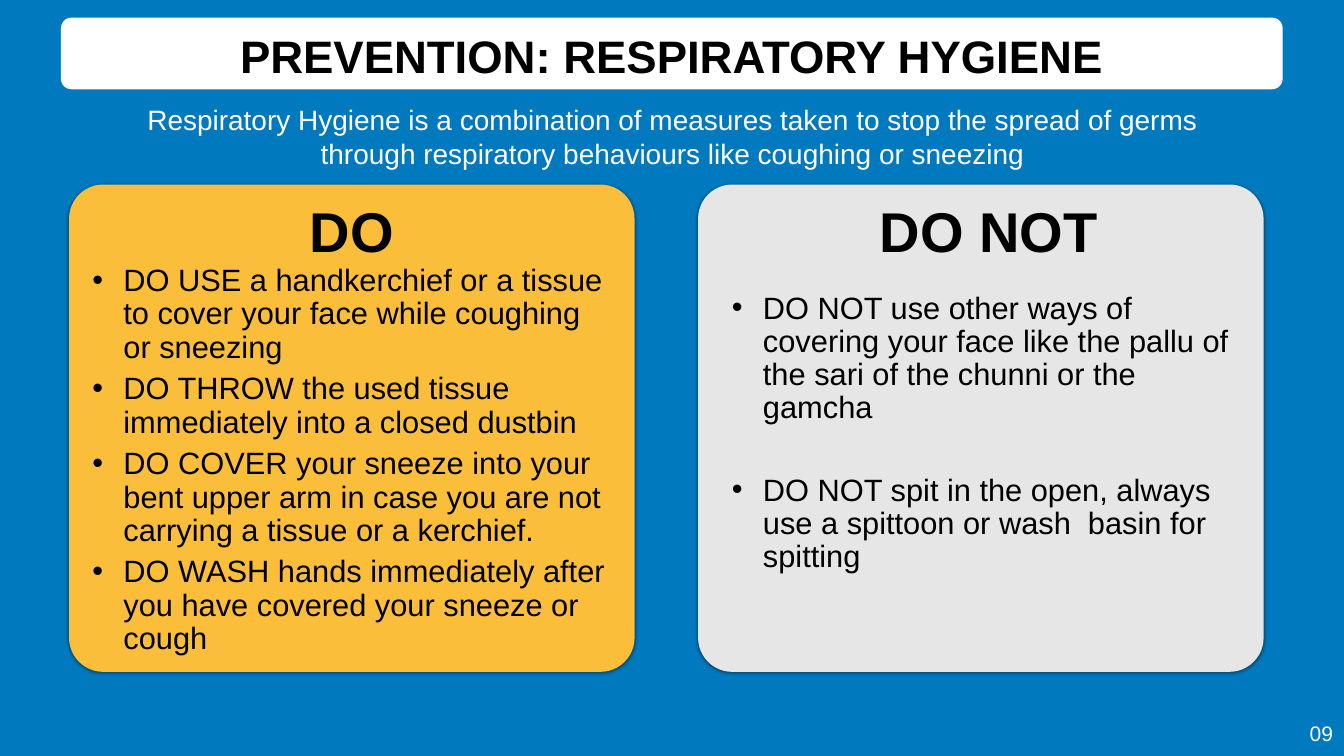
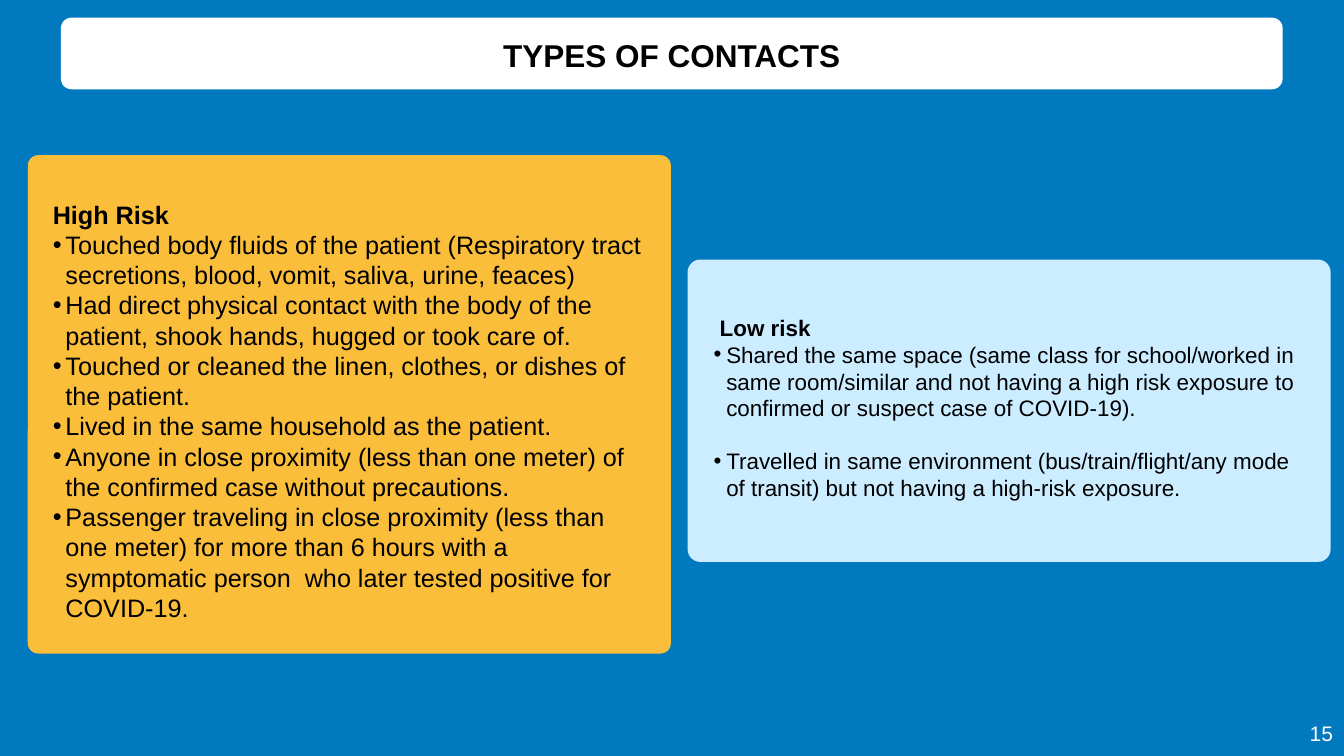
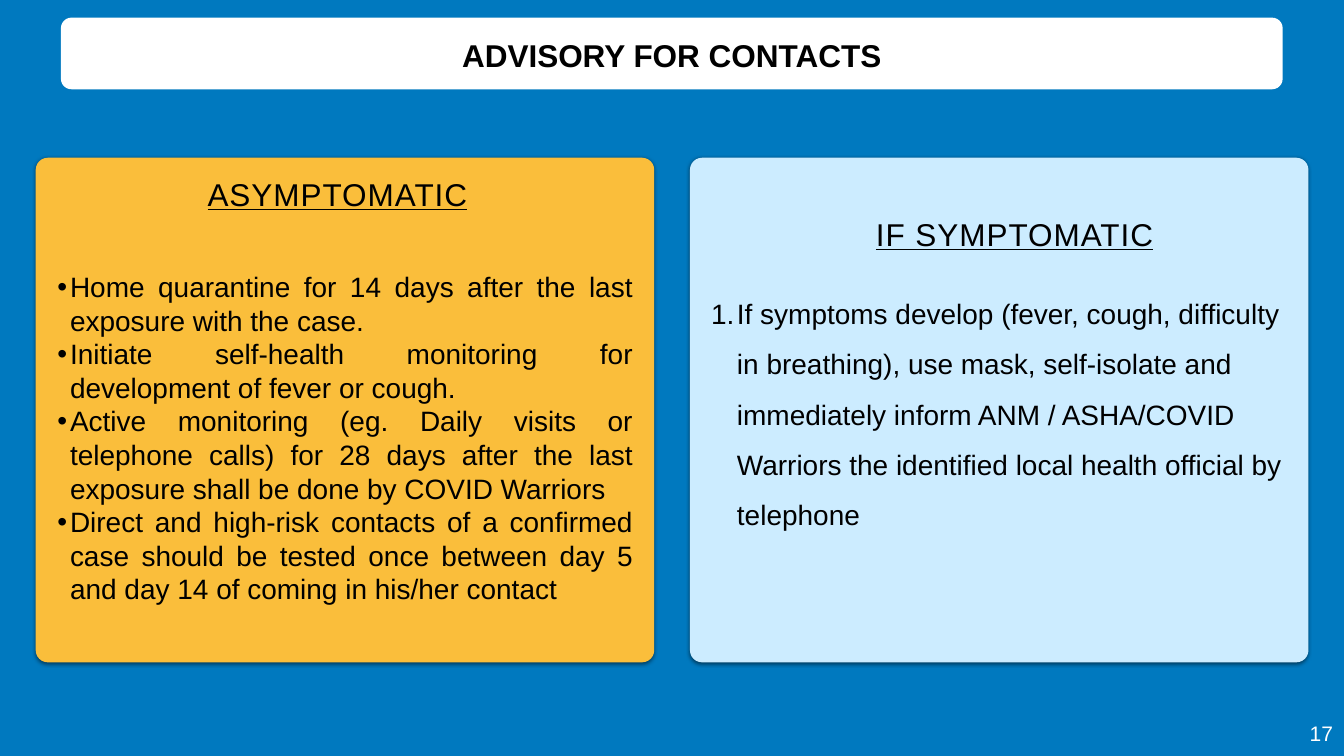
from lxml import etree
from pptx import Presentation
from pptx.dml.color import RGBColor
from pptx.enum.shapes import MSO_SHAPE
from pptx.enum.text import MSO_ANCHOR, MSO_AUTO_SIZE, PP_ALIGN
from pptx.oxml.ns import qn
from pptx.util import Cm, Pt

ROUNDED = MSO_SHAPE.ROUNDED_RECTANGLE
TOP, MIDDLE = MSO_ANCHOR.TOP, MSO_ANCHOR.MIDDLE
LEFT, CENTER, JUSTIFY = PP_ALIGN.LEFT, PP_ALIGN.CENTER, PP_ALIGN.JUSTIFY
FIT_SHAPE = MSO_AUTO_SIZE.SHAPE_TO_FIT_TEXT

FONT = "Arial"
COLORS = {
    "background": "0079BF",
    "band": "FFFFFF",
    "amber": "FABE3B",
    "grey": "E5E6E5",
    "pale_blue": "CCECFF",
    "text": "000000",
    "light_text": "FFFFFF",
}
BAND = (3.07, 0.89, 61.57, 3.61)
BAND_TEXT_WIDTH = 47

DO_ITEMS = [
    "DO USE a handkerchief or a tissue to cover your face while coughing or sneezing",
    "DO THROW the used tissue immediately into a closed dustbin",
    "DO COVER your sneeze into your bent upper arm in case you are not carrying a "
    "tissue or a kerchief.",
    "DO WASH hands immediately after you have covered your sneeze or cough",
]
DO_NOT_ITEMS = [
    "DO NOT use other ways of covering your face like the pallu of the sari of the "
    "chunni or the gamcha",
    "DO NOT spit in the open, always use a spittoon or wash  basin for spitting",
]
HIGH_RISK_ITEMS = [
    "Touched body fluids of the patient (Respiratory tract secretions, blood, vomit, "
    "saliva, urine, feaces)",
    "Had direct physical contact with the body of the patient, shook hands, hugged or "
    "took care of.",
    "Touched or cleaned the linen, clothes, or dishes of the patient.",
    "Lived in the same household as the patient.",
    "Anyone in close proximity (less than one meter) of the confirmed case without "
    "precautions.",
    "Passenger traveling in close proximity (less than one meter) for more than 6 hours "
    "with a symptomatic person  who later tested positive for COVID-19.",
]
LOW_RISK_ITEMS = [
    "Shared the same space (same class for school/worked in same room/similar and not "
    "having a high risk exposure to confirmed or suspect case of COVID-19).",
    "Travelled in same environment (bus/train/flight/any mode of transit) but not "
    "having a high-risk exposure.",
]
ASYMPTOMATIC_ITEMS = [
    "Home quarantine for 14 days after the last exposure with the case.",
    "Initiate self-health monitoring for development of fever or cough.",
    "Active monitoring (eg. Daily visits or telephone calls) for 28 days after the last "
    "exposure shall be done by COVID Warriors",
    "Direct and high-risk contacts of a confirmed case should be tested once between "
    "day 5 and day 14 of coming in his/her contact",
]
SYMPTOMATIC_ITEMS = [
    "If symptoms develop (fever, cough, difficulty in breathing), use mask, self-isolate "
    "and immediately inform ANM / ASHA/COVID Warriors the identified local health "
    "official by telephone",
]


def add_shadow(sp):
    effects = sp._element.spPr.find(qn("a:effectLst"))
    shadow = etree.SubElement(effects, qn("a:outerShdw"), blurRad=str(Pt(5)),
                              dist=str(Pt(2)), dir="5400000", rotWithShape="0")
    color = etree.SubElement(shadow, qn("a:srgbClr"), val="000000")
    etree.SubElement(color, qn("a:alpha"), val="50000")


def add_card(shapes, box, fill, corner, shadow=False):
    sp = shapes.add_shape(ROUNDED, *map(Cm, box))
    sp.adjustments[0] = corner
    sp.fill.solid()
    sp.fill.fore_color.rgb = RGBColor.from_string(COLORS[fill])
    sp.line.fill.background()
    sp.shadow.inherit = False
    if shadow:
        add_shadow(sp)


def add_frame(shapes, box, anchor=TOP, wrap=True, inset=0.15):
    """Add an empty text box and return its text frame."""
    tf = shapes.add_textbox(*map(Cm, box)).text_frame
    tf.word_wrap = wrap
    tf.auto_size = FIT_SHAPE
    tf.vertical_anchor = anchor
    tf.margin_left = tf.margin_right = tf.margin_top = tf.margin_bottom = Cm(inset)
    return tf


def add_paragraph(tf, text, size, align=LEFT, bold=False, color="text"):
    p = tf.paragraphs[0] if not tf.text else tf.add_paragraph()
    p.text = text
    p.alignment = align
    p.font.name = FONT
    p.font.size = Pt(size)
    p.font.bold = bold
    p.font.color.rgb = RGBColor.from_string(COLORS[color])
    return p


def set_indent(p, left, first=0):
    pPr = p._p.get_or_add_pPr()
    pPr.set("marL", str(Cm(left)))
    pPr.set("indent", str(Cm(first)))
    return pPr


def add_list(tf, items, size, indent, align=LEFT, before=0, gap=None, spacing=1.0,
             numbered=False):
    """Add hanging items; gap replaces the space before every item but the first."""
    for i, item in enumerate(items):
        p = add_paragraph(tf, item, size, align)
        p.line_spacing = spacing
        p.space_before = Pt(gap if i and gap else before)
        pPr = set_indent(p, indent, -indent)
        defaults = pPr.find(qn("a:defRPr"))
        if numbered:
            marks = [("a:buFont", {"typeface": FONT}),
                     ("a:buAutoNum", {"type": "arabicPeriod"})]
        else:
            marks = [("a:buFont", {"typeface": FONT}), ("a:buChar", {"char": "•"})]
        for tag, attributes in marks:
            defaults.addprevious(pPr.makeelement(qn(tag), attributes))


def inside(box, dx, dy, width, height):
    return box[0] + dx, box[1] + dy, width, height


def add_title_band(slide, title, size):
    shapes = slide.shapes.add_group_shape().shapes
    add_card(shapes, BAND, "band", 0.147)
    height = 0.04 * size + 0.23
    box = inside(BAND, (BAND[2] - BAND_TEXT_WIDTH) / 2, (BAND[3] - height) / 2,
                 BAND_TEXT_WIDTH, height)
    add_paragraph(add_frame(shapes, box, inset=0.13), title, size, CENTER, bold=True)


def add_page_number(slide, number):
    tf = add_frame(slide.shapes, (65.84, 36.2, 1.5, 1.47), MIDDLE, wrap=False)
    add_paragraph(tf, number, 30, CENTER, color="light_text")


def add_base_slide(prs, title, title_size, number):
    slide = prs.slides.add_slide(prs.slide_layouts[6])
    fill = slide.background.fill
    fill.solid()
    fill.fore_color.rgb = RGBColor.from_string(COLORS["background"])
    add_title_band(slide, title, title_size)
    add_page_number(slide, number)
    return slide


def add_hygiene_card(slide, box, fill, heading, heading_box, items, items_box, gap=None):
    add_card(slide.shapes, box, fill, 0.07, shadow=True)
    tf = add_frame(slide.shapes, inside(box, *heading_box), wrap=False, inset=0.13)
    add_paragraph(tf, heading, 80, CENTER, bold=True)
    tf = add_frame(slide.shapes, inside(box, *items_box), inset=0.13)
    add_list(tf, items, 44, 1.57, before=12, gap=gap, spacing=0.9)


def add_risk_card(slide, box, fill, corner, heading, items, text_box, size,
                  heading_indent=0, gap=None):
    add_card(slide.shapes, box, fill, corner)
    tf = add_frame(slide.shapes, inside(box, *text_box), MIDDLE)
    set_indent(add_paragraph(tf, heading, size, bold=True), heading_indent)
    add_list(tf, items, size, 0.64, gap=gap)


def add_advice_card(slide, box, fill, heading, heading_box, items, items_box, **list_style):
    add_card(slide.shapes, box, fill, 0.024, shadow=True)
    tf = add_frame(slide.shapes, inside(box, *heading_box), wrap=False)
    p = add_paragraph(tf, heading, 45)
    p.font.underline = True
    rPr = p.runs[0]._r.get_or_add_rPr()
    rPr.set("spc", "140")
    outline = etree.SubElement(rPr, qn("a:ln"), w=str(Pt(0.75)))
    solid = etree.SubElement(outline, qn("a:solidFill"))
    etree.SubElement(solid, qn("a:srgbClr"), val=COLORS["text"])
    tf = add_frame(slide.shapes, inside(box, *items_box), MIDDLE)
    add_list(tf, items, 40, **list_style)


def build_hygiene_slide(prs):
    slide = add_base_slide(prs, "PREVENTION: RESPIRATORY HYGIENE", 65, "09")
    tf = add_frame(slide.shapes, (5.79, 5.18, 56.16, 3.4), MIDDLE)
    add_paragraph(tf, "Respiratory Hygiene is a combination of measures taken to stop the "
                  "spread of germs through respiratory behaviours like coughing or sneezing",
                  40, CENTER, color="light_text")
    add_hygiene_card(slide, (3.48, 9.3, 28.5, 24.56), "amber",
                     "DO", (11.99, 0.45, 4.52, 3.4),
                     DO_ITEMS, (1.04, 3.93, 26.39, 19.15))
    add_hygiene_card(slide, (35.18, 9.3, 28.5, 24.56), "grey",
                     "DO NOT", (9.02, 0.45, 11.25, 3.4),
                     DO_NOT_ITEMS, (1.57, 5.31, 25.35, 13.97), gap=70)


def build_contact_types_slide(prs):
    slide = add_base_slide(prs, "TYPES OF CONTACTS", 45, "15")
    add_risk_card(slide, (1.4, 7.82, 32.41, 25.12), "amber", 0.021, "High Risk",
                  HIGH_RISK_ITEMS, (1.11, 2.39, 30.12, 20.98), 36)
    add_risk_card(slide, (34.65, 13.08, 32.41, 15.24), "pale_blue", 0.042, "Low risk",
                  LOW_RISK_ITEMS, (1.16, 2.77, 29.87, 9.37), 32,
                  heading_indent=0.31, gap=37)


def build_advisory_slide(prs):
    slide = add_base_slide(prs, "ADVISORY FOR CONTACTS", 45, "17")
    add_advice_card(slide, (1.8, 7.95, 31.17, 25.43), "amber",
                    "ASYMPTOMATIC", (8.51, 0.71, 13.44, 2.06),
                    ASYMPTOMATIC_ITEMS, (0.94, 6.05, 29.29, 16.1),
                    indent=0.64, align=JUSTIFY)
    add_advice_card(slide, (34.77, 7.95, 31.17, 25.43), "pale_blue",
                    "IF SYMPTOMATIC", (9.22, 2.72, 14.33, 2.06),
                    SYMPTOMATIC_ITEMS, (0.92, 6.86, 30.05, 11.25),
                    indent=1.3, before=12, spacing=1.5, numbered=True)


def main():
    prs = Presentation()
    prs.slide_width, prs.slide_height = Cm(67.73), Cm(38.1)
    build_hygiene_slide(prs)
    build_contact_types_slide(prs)
    build_advisory_slide(prs)
    prs.save("out.pptx")


if __name__ == "__main__":
    main()
